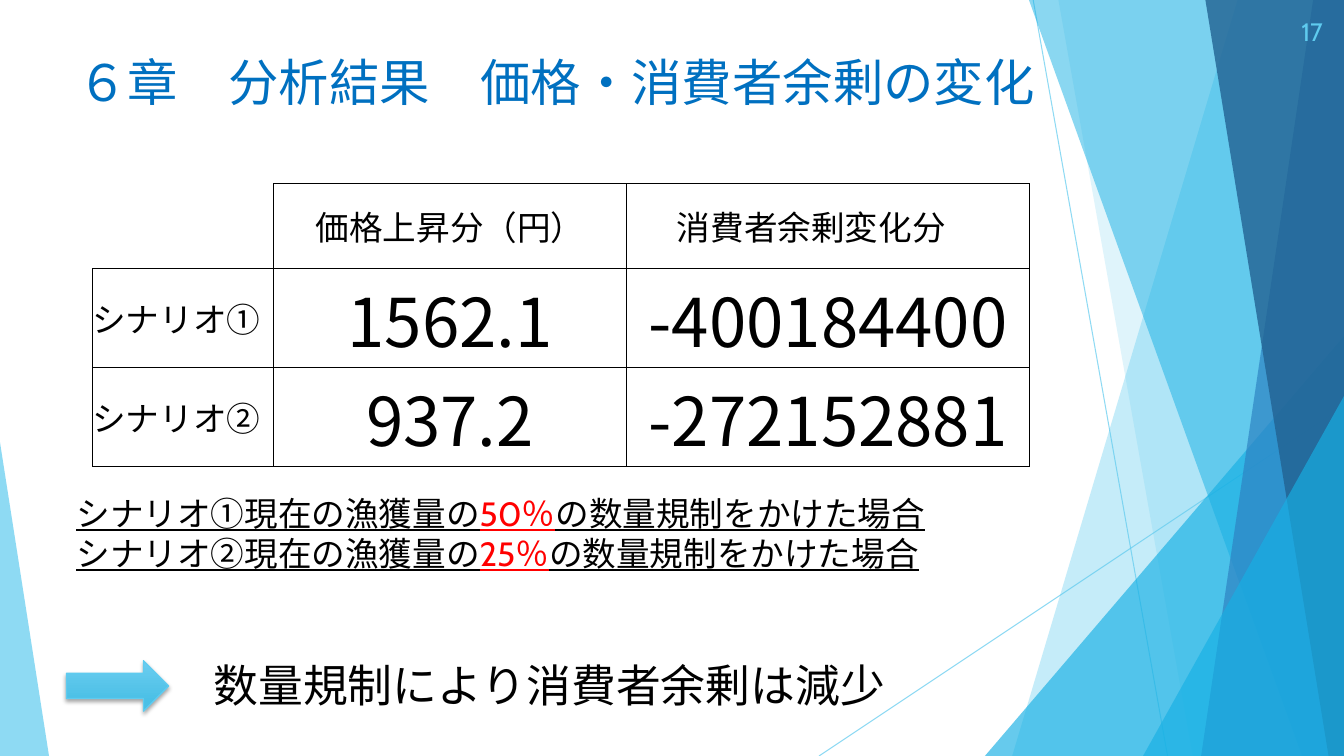
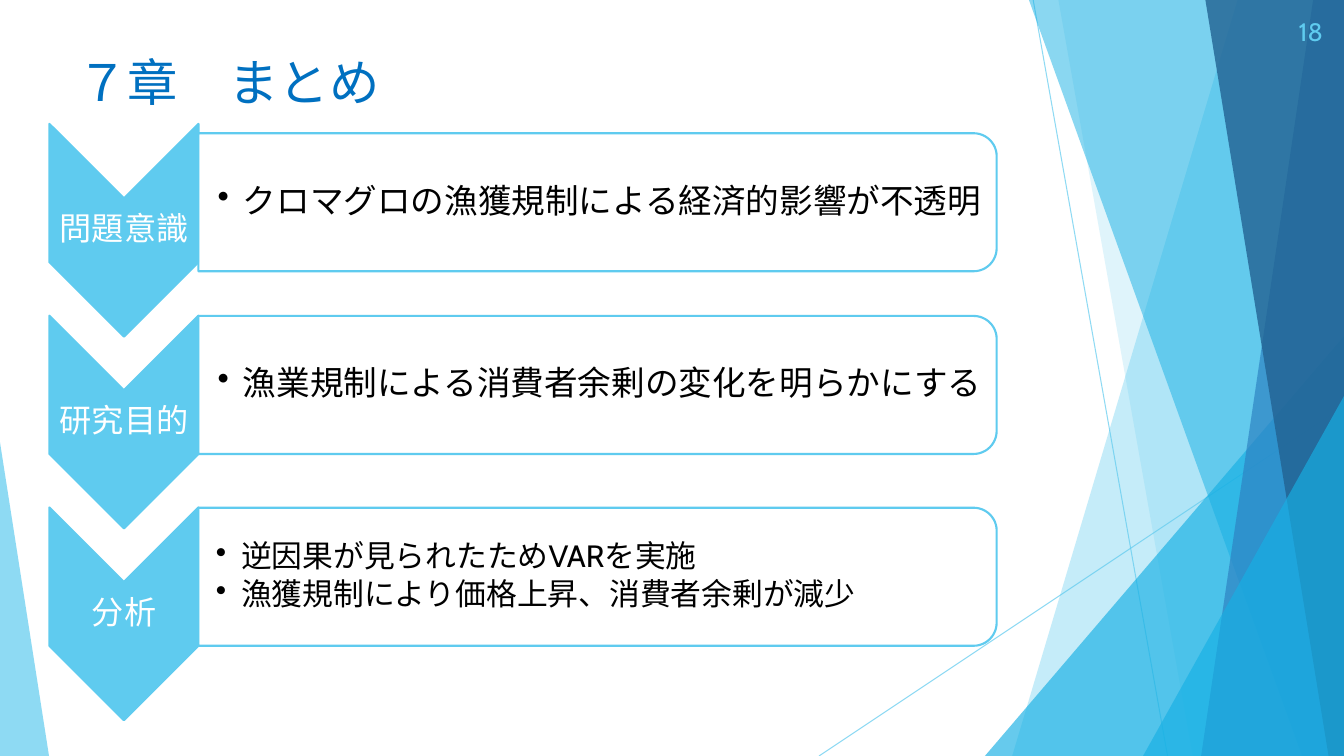
from lxml import etree
from pptx import Presentation
from pptx.dml.color import RGBColor
from pptx.enum import shapes as es, text as et
from pptx.oxml import ns
from pptx.util import Pt

HUE = {"sky": "5FCBEF", "cyan": "17B0E4", "blue": "2E83C3", "navy": "226292",
       "title": "0070C0", "red": "FF0000", "black": "000000", "white": "FFFFFF",
       "light": "6CCDF0", "deep": "4BC0E6"}
FONT, GRID_FONT = "Cabin", "Noto Sans CJK JP"
WIDE, HIGH = 960, 540
KIND, ALIGN, ANCHOR = es.MSO_SHAPE, et.PP_ALIGN, et.MSO_ANCHOR
PAD = (7.2, 3.6, 7.2, 3.6)


def rgb(name):
    return RGBColor.from_string(HUE[name])


def sub(node, tag, **attrs):
    kid = etree.SubElement(node, ns.qn(tag))
    for key, val in attrs.items():
        kid.set(key, str(val))
    return kid


def fade(fill, pct):
    """Make a solid fill show at pct per cent opacity."""
    tone = fill._xPr.find(".//" + ns.qn("a:srgbClr"))
    sub(tone, "a:alpha", val=pct * 1000)


def paint(shape, fill, alpha=100, line=None, width=1.5):
    shape.shadow.inherit = False
    shape.fill.solid()
    shape.fill.fore_color.rgb = rgb(fill)
    if alpha < 100:
        fade(shape.fill, alpha)
    if line:
        shape.line.color.rgb = rgb(line)
        shape.line.width = Pt(width)
    else:
        shape.line.fill.background()


def write(frame, *paras, size=24, color="black", font=FONT, align=ALIGN.LEFT,
          anchor=ANCHOR.TOP, pad=PAD, under=None, lead=None, after=None, bullet=None):
    """Fill a text frame; a paragraph is a string or a list of (text, colour)."""
    frame.word_wrap = True
    frame.vertical_anchor = anchor
    (frame.margin_left, frame.margin_top,
     frame.margin_right, frame.margin_bottom) = map(Pt, pad)
    for num, para in enumerate(paras):
        p = frame.add_paragraph() if num else frame.paragraphs[0]
        p.alignment = align
        if lead:
            p.line_spacing = lead
        if after is not None:
            p.space_after = Pt(after)
        if bullet:
            props = p._p.get_or_add_pPr()
            props.set("marL", str(Pt(18)))
            props.set("indent", str(-Pt(18)))
            sub(props, "a:buChar", char=bullet)
        for words, tone in [(para, color)] if isinstance(para, str) else para:
            run = p.add_run()
            run.text = words
            run.font.name = font
            run.font.size = Pt(size)
            run.font.bold = False
            run.font.underline = under
            run.font.color.rgb = rgb(tone)
            sub(run._r.get_or_add_rPr(), "a:ea", typeface=font)


def box(slide, at, *paras, **fmt):
    shape = slide.shapes.add_textbox(*map(Pt, at))
    write(shape.text_frame, *paras, **fmt)


def line(slide, *ends):
    link = slide.shapes.add_connector(es.MSO_CONNECTOR.STRAIGHT, *map(Pt, ends))
    link.line.color.rgb = rgb("sky")
    link.line.width = Pt(0.75)
    fade(link.line.fill, 70)
    sub(link._element.spPr, "a:effectLst")


def band(slide, top, base, fill, alpha):
    """Draw a band from a slanted left edge to the right side of the slide."""
    path = slide.shapes.build_freeform(top, 0, scale=Pt(1))
    path.add_line_segments([(WIDE, 0), (WIDE, HIGH), (base, HIGH)])
    paint(path.convert_to_shape(), fill, alpha)


def wedge(slide, left, top, wide, peak, fill, alpha):
    """Draw a right triangle that stands on the bottom edge."""
    shape = slide.shapes.add_shape(KIND.ISOSCELES_TRIANGLE, Pt(left), Pt(top),
                                   Pt(wide), Pt(HIGH - top))
    shape.adjustments[0] = peak
    paint(shape, fill, alpha)


def decor(slide):
    """Draw the shared backdrop and move it to the slide's layout."""
    line(slide, 738, 0, 834, HIGH)
    line(slide, WIDE, 290, 585, HIGH)
    band(slide, 884, 723, "sky", 36)
    band(slide, 756, 852, "sky", 20)
    wedge(slide, 703.5, 240, 256.5, 1, "cyan", 66)
    band(slide, 735, 930, "cyan", 50)
    band(slide, 938, 858, "blue", 70)
    band(slide, 861, 949, "navy", 80)
    wedge(slide, 816.5, 283, 143.5, 1, "cyan", 66)
    wedge(slide, 0, 316, 35, 0, "sky", 70)
    tree = slide.slide_layout.shapes._spTree
    art = [s for s in slide.shapes if not s.is_placeholder]
    for spot, shape in enumerate(art, 2):
        tree.insert(spot, shape._element)


def start(deck, title, page):
    """Add a slide with its title and page number."""
    first = len(deck.slides) == 0
    slide = deck.slides.add_slide(deck.slide_layouts[5])
    if first:
        decor(slide)
    head = slide.shapes.title
    head.left, head.top, head.width, head.height = map(Pt, (48, 25, 872, 66))
    write(head.text_frame, title, size=36, color="title", anchor=ANCHOR.MIDDLE)
    box(slide, (898, 8, 54, 29), page, size=18, color="sky",
        align=ALIGN.RIGHT, anchor=ANCHOR.MIDDLE)
    return slide


def frame(cell, bare):
    """Give a cell thin black borders, leaving out the sides in bare."""
    props = cell._tc.get_or_add_tcPr()
    for side in "LRTB":
        edge = sub(props, "a:ln" + side, w=Pt(0.5))
        if side in bare:
            sub(edge, "a:noFill")
        else:
            sub(sub(edge, "a:solidFill"), "a:srgbClr", val=HUE["black"])


def grid(slide, left, top, cols, rows, data):
    table = slide.shapes.add_table(len(rows), len(cols), Pt(left), Pt(top),
                                   Pt(sum(cols)), Pt(sum(rows))).table
    table.first_row = table.horz_banding = False
    for col, wide in zip(table.columns, cols):
        col.width = Pt(wide)
    for row, high in zip(table.rows, rows):
        row.height = Pt(high)
    for r, vals in enumerate(data):
        for c, val in enumerate(vals):
            cell = table.cell(r, c)
            frame(cell, "" if r or c else "LT")
            cell.fill.background()
            cell.vertical_anchor = ANCHOR.MIDDLE
            cell.margin_left = cell.margin_right = 0
            cell.margin_top = cell.margin_bottom = 0
            if val:
                fill_cell(cell, val, 48 if r and c else 24,
                          ALIGN.CENTER if c else ALIGN.LEFT)


def fill_cell(cell, val, size, align):
    p = cell.text_frame.paragraphs[0]
    p.alignment = align
    run = p.add_run()
    run.text = val
    run.font.size = Pt(size)
    run.font.name = GRID_FONT
    run.font.color.rgb = rgb("black")
    sub(run._r.get_or_add_rPr(), "a:ea", typeface=GRID_FONT)


def arrow(slide, *at):
    shape = slide.shapes.add_shape(KIND.RIGHT_ARROW, *map(Pt, at))
    paint(shape, "sky", line="sky", width=1)
    shape.fill.gradient()
    shape.fill.gradient_angle = 270
    for stop, tone, pos in zip(shape.fill.gradient_stops, ("light", "deep"), (0, 0.78)):
        stop.color.rgb = rgb(tone)
        stop.position = pos
    glow = sub(shape._element.spPr.find(ns.qn("a:effectLst")), "a:outerShdw",
               blurRad=Pt(3), dist=Pt(2), dir=5400000, rotWithShape=0)
    sub(sub(glow, "a:srgbClr", val=HUE["black"]), "a:alpha", val=35000)


def turned(slide, kind, mid_x, mid_y, wide, high, **look):
    """Add a shape centred on a point and turned by a quarter."""
    shape = slide.shapes.add_shape(kind, Pt(mid_x - wide / 2), Pt(mid_y - high / 2),
                                   Pt(wide), Pt(high))
    shape.rotation = 90
    paint(shape, **look)


def step(slide, mid, bar, label, points, size, inset):
    """Add a chevron centred at height mid and its bullet panel at height bar."""
    turned(slide, KIND.CHEVRON, 88.5, mid, 152, 106.5, fill="sky", line="sky")
    box(slide, (35.5, mid - 22.5, 106.5, 45), label, size=23, color="white",
        align=ALIGN.CENTER, anchor=ANCHOR.MIDDLE, pad=[1.4] * 4, lead=0.9, after=8)
    turned(slide, KIND.ROUND_2_SAME_RECTANGLE, 426.8, bar, 98.6, 570.2,
           fill="white", alpha=90, line="sky")
    box(slide, (142, bar - 44.6, 565, 89.2), *points, size=size, bullet="•",
        anchor=ANCHOR.MIDDLE, pad=(inset, 1.4, 1.4, 1.4), lead=0.9, after=3.5)


def results(deck):
    slide = start(deck, "６章　分析結果　価格・消費者余剰の変化", "17")
    grid(slide, 66, 131, (129.5, 252, 288), (61, 70.5, 70.5), [
        ("", "価格上昇分（円）", "消費者余剰変化分　"),
        ("シナリオ①", "1562.1", "-400184400"),
        ("シナリオ②", "937.2", "-272152881")])
    cases = [[(f"シナリオ{mark}現在の漁獲量の", "black"), (f"{rate}％", "red"),
              ("の数量規制をかけた場合", "black")]
             for mark, rate in (("①", 50), ("②", 25))]
    box(slide, (47.5, 348.5, 675, 65.5), *cases, under=True)
    arrow(slide, 47.5, 472, 73, 36)
    box(slide, (145.5, 466.5, 606, 46), "数量規制により消費者余剰は減少", size=32)


def summary(deck):
    slide = start(deck, "７章　まとめ", "18")
    steps = [
        (144.5, "問題意識", ["クロマグロの漁獲規制による経済的影響が不透明"], 24, 13.5),
        (275, "研究目的", ["漁業規制による消費者余剰の変化を明らかにする"], 24, 13.5),
        (412, "分析", ["逆因果が見られたためVARを実施",
                     "漁獲規制により価格上昇、消費者余剰が減少"], 22, 12.3)]
    for num, (bar, *rest) in enumerate(steps):
        step(slide, 164.5 + 137 * num, bar, *rest)


def main():
    deck = Presentation()
    deck.slide_width, deck.slide_height = Pt(WIDE), Pt(HIGH)
    results(deck)
    summary(deck)
    deck.save("out.pptx")


if __name__ == "__main__":
    main()
